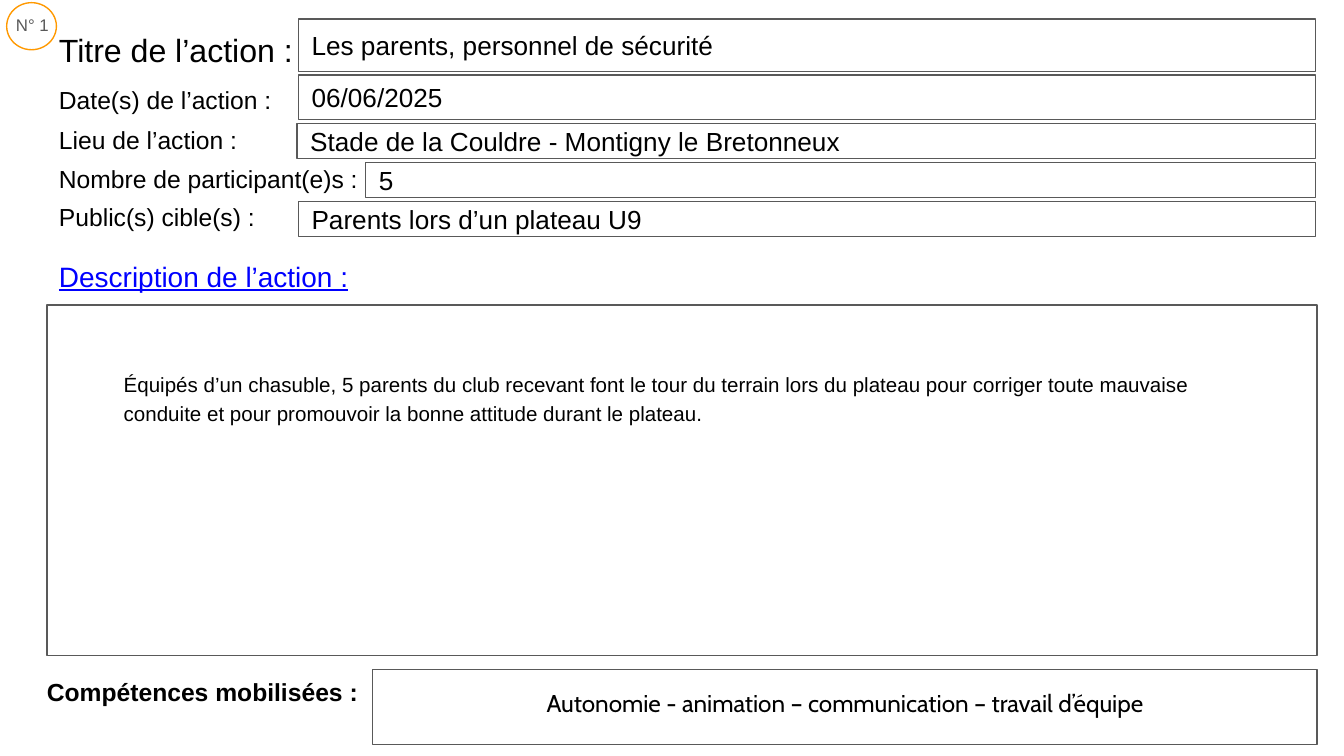
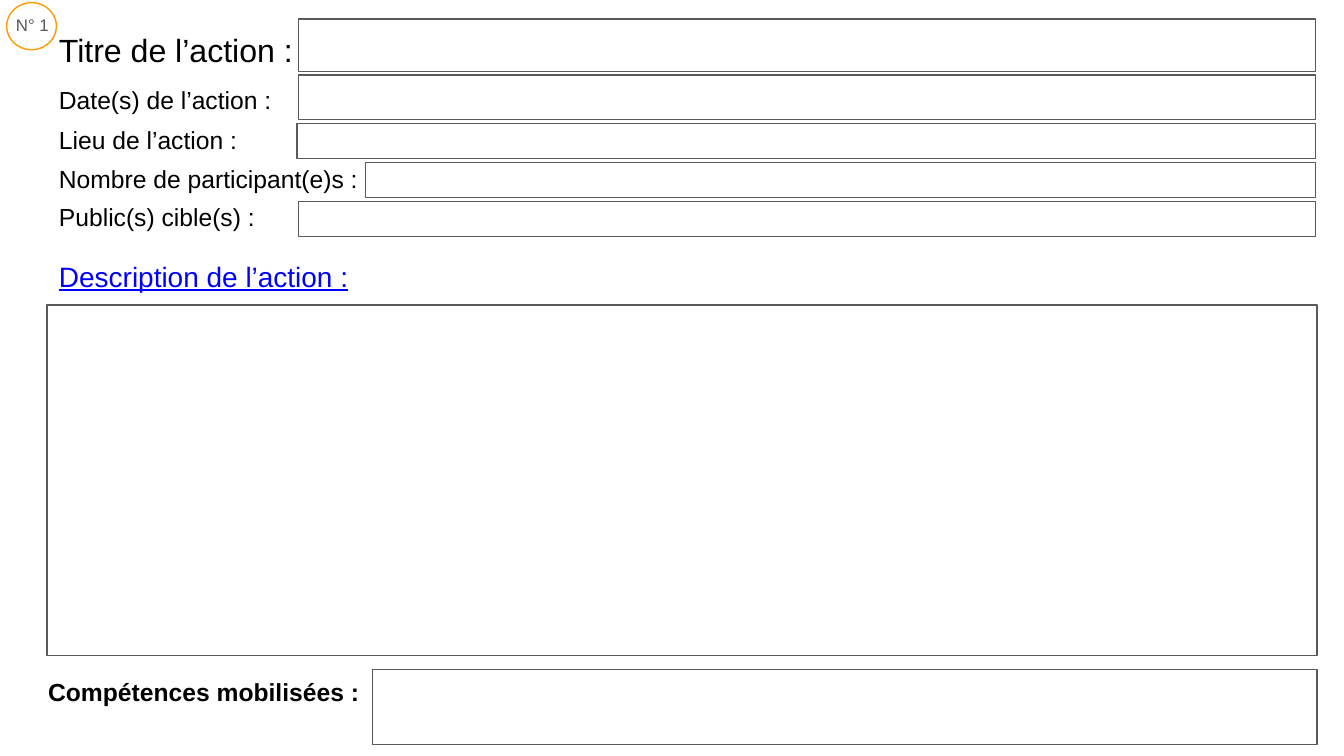
from pptx import Presentation
from pptx import util as u
from pptx.dml.color import RGBColor
from pptx.enum import shapes, text

COLOURS = {"ink": "000000", "grey": "595959", "heading": "0000FF", "ring": "FF9900"}
BODY_FONT = "Arial"
PAGE_WIDTH = 10
INSET = 0.1
FIELD_RIGHT = 9.79
PANEL_RIGHT = 9.8

# Label, label top, label height, label size, field left, field top, field height
ROWS = [
    ("Titre de l’action :", 0.13, 0.47, 17.2, 2.22, 0.14, 0.39),
    ("Date(s) de l’action :", 0.53, 0.35, 13.2, 2.22, 0.56, 0.33),
    ("Lieu de l’action :", 0.83, 0.35, 13.2, 2.21, 0.92, 0.26),
    ("Nombre de participant(e)s :", 1.12, 0.35, 13.2, 2.72, 1.21, 0.26),
    ("Public(s) cible(s) :", 1.4, 0.35, 13.2, 2.22, 1.5, 0.26),
]

FILLED_FORM = {
    "fields": [
        "Les parents, personnel de sécurité",
        "06/06/2025",
        "Stade de la Couldre - Montigny le Bretonneux",
        "5",
        "Parents lors d’un plateau U9",
    ],
    "description": "Équipés d’un chasuble, 5 parents du club recevant font le tour du "
                   "terrain lors du plateau pour corriger toute mauvaise conduite et pour "
                   "promouvoir la bonne attitude durant le plateau.",
    "skills": "Autonomie - animation – communication – travail d’équipe",
    "skills_label": (0.25, 2.55),
}
EMPTY_FORM = {
    "fields": [""] * len(ROWS),
    "description": "",
    "skills": "",
    "skills_label": (0.26, 9.32),
}


def colour(name):
    return RGBColor.from_string(COLOURS[name])


def write(shape, words, size, ink="ink", font=BODY_FONT, align=text.PP_ALIGN.LEFT,
          anchor=text.MSO_ANCHOR.TOP, insets=(INSET,) * 4, spacing=None, wrap=True):
    """Fill a shape with one paragraph; insets run left, top, right, bottom."""
    frame = shape.text_frame
    frame.word_wrap = wrap
    frame.vertical_anchor = anchor
    (frame.margin_left, frame.margin_top,
     frame.margin_right, frame.margin_bottom) = map(u.Inches, insets)
    paragraph = frame.paragraphs[0]
    paragraph.text = words
    paragraph.alignment = align
    if spacing:
        paragraph.line_spacing = spacing
    paragraph.font.name = font
    paragraph.font.size = u.Pt(size)
    paragraph.font.color.rgb = colour(ink)
    return paragraph


def add_label(page, words, left, top, width, height, size, **style):
    box = page.shapes.add_textbox(*map(u.Inches, (left, top, width, height)))
    return write(box, words, size, **style)


def add_outline(page, kind, left, top, width, height, line="grey"):
    shape = page.shapes.add_shape(kind, *map(u.Inches, (left, top, width, height)))
    shape.shadow.inherit = False
    shape.fill.background()
    shape.line.color.rgb = colour(line)
    shape.line.width = u.Pt(0.75)
    return shape


def add_field(page, words, left, top, right, height, size, **style):
    field = add_outline(page, shapes.MSO_SHAPE.RECTANGLE, left, top, right - left, height)
    if words:
        write(field, words, size, **style)


def add_form(deck, form):
    page = deck.slides.add_slide(deck.slide_layouts[6])

    # Heading of the description
    heading = add_label(page, "Description de l’action :", 0.34, 1.79, 9.45, 3.12, 15,
                        ink="heading", spacing=1.15)
    heading.font.underline = True

    # Labelled fields
    for row, answer in zip(ROWS, form["fields"]):
        label, label_top, label_height, size, left, top, height = row
        add_label(page, label, 0.34, label_top, 9.32, label_height, size)
        add_field(page, answer, left, top, FIELD_RIGHT, height, 14,
                  anchor=text.MSO_ANCHOR.MIDDLE)

    # Description panel
    add_field(page, form["description"], 0.35, 2.27, PANEL_RIGHT, 2.61, 11,
              insets=(0.57, 0.47, 0.57, INSET), spacing=1.16)

    # Skills
    label_left, label_width = form["skills_label"]
    skills = add_label(page, "Compétences mobilisées :", label_left, 4.94,
                       label_width, 0.47, 13.2)
    skills.font.bold = True
    add_field(page, form["skills"], 2.77, 4.98, PANEL_RIGHT, 0.56, 13, font="Cabin",
              align=text.PP_ALIGN.CENTER, spacing=1.18)

    # Number badge
    add_label(page, "N° 1", 0.02, 0.02, 0.47, 0.33, 9, ink="grey",
              insets=(INSET, 0.12, INSET, INSET), wrap=False)
    add_outline(page, shapes.MSO_SHAPE.OVAL, 0.05, 0.02, 0.37, 0.35, line="ring")


def main():
    deck = Presentation()
    deck.slide_width = u.Inches(PAGE_WIDTH)
    deck.slide_height = u.Inches(PAGE_WIDTH * 9 / 16)
    for form in (FILLED_FORM, EMPTY_FORM):
        add_form(deck, form)
    deck.save("out.pptx")


if __name__ == "__main__":
    main()
